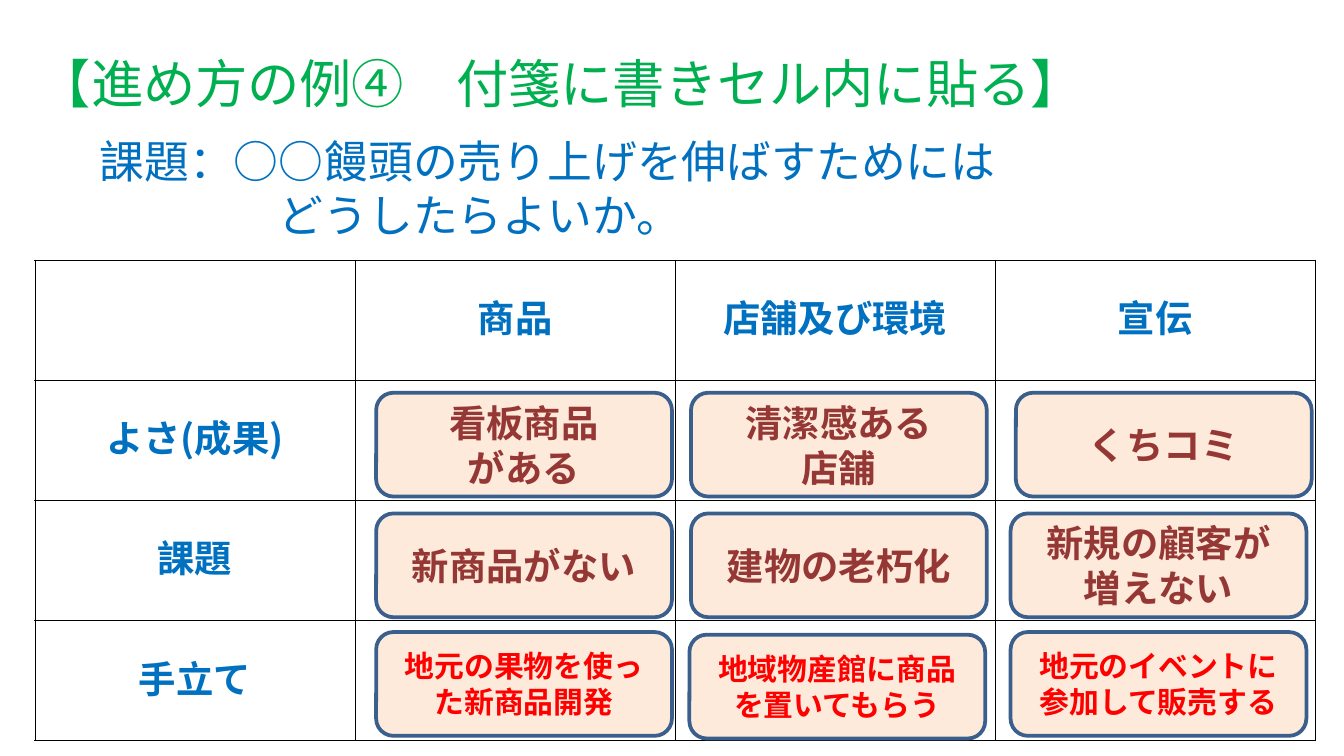
from typing import NamedTuple

from lxml import etree
from pptx import Presentation
from pptx import util as u
from pptx.dml.color import RGBColor
from pptx.enum import shapes, text
from pptx.oxml import ns

JAPANESE = "Noto Sans CJK JP"
BLUE, GREEN, BROWN, RED = "0070C0", "00B050", "953735", "FF0000"
NOTE_FILL, NOTE_LINE, BLACK = "FDEADA", "3A5F8C", "000000"


class Style(NamedTuple):
    size: int
    color: str
    bold: bool = False
    font: str = JAPANESE
    align: text.PP_ALIGN = text.PP_ALIGN.CENTER


class Note(NamedTuple):
    left: float
    top: float
    wording: str
    style: Style


TITLE = Style(28, GREEN, font="Arial", align=text.PP_ALIGN.LEFT)
QUESTION = Style(24, BLUE, align=text.PP_ALIGN.LEFT)
HEADING = Style(20, BLUE, bold=True)
FINDING = Style(20, BROWN, bold=True)
ACTION = Style(16, RED, bold=True)

TOPICS = ["商品", "店舗及び環境", "宣伝"]
VIEWPOINTS = ["よさ(成果)", "課題", "手立て"]
NOTES = [
    Note(7.11, 7.42, "看板商品\nがある", FINDING),
    Note(7.11, 9.7, "新商品がない", FINDING),
    Note(7.11, 11.94, "地元の果物を使った新商品開発", ACTION),
    Note(13.06, 7.42, "清潔感ある\n店舗", FINDING),
    Note(13.06, 9.7, "建物の老朽化", FINDING),
    Note(13.03, 11.99, "地域物産館に商品を置いてもらう", ACTION),
    Note(19.2, 7.42, "くちコミ", FINDING),
    Note(19.1, 9.7, "新規の顧客が増えない", FINDING),
    Note(19.1, 11.94, "地元のイベントに参加して販売する", ACTION),
]


def rgb(value: str) -> RGBColor:
    return RGBColor.from_string(value)


def write(frame, wording: str, style: Style) -> None:
    frame.text = wording
    frame.word_wrap = True
    frame.vertical_anchor = text.MSO_ANCHOR.MIDDLE
    for paragraph in frame.paragraphs:
        paragraph.alignment = style.align
        paragraph.line_spacing = u.Pt(style.size * 1.2)
        for run in paragraph.runs:
            font = run.font
            font.size, font.bold, font.name = u.Pt(style.size), style.bold, style.font
            font.color.rgb = rgb(style.color)
            east_asian = etree.SubElement(run._r.get_or_add_rPr(), ns.qn("a:ea"))
            east_asian.set("typeface", JAPANESE)


def outline_cell(cell) -> None:
    properties = cell._tc.get_or_add_tcPr()
    for position, side in enumerate(("lnL", "lnR", "lnT", "lnB")):
        border = etree.Element(ns.qn(f"a:{side}"), w=str(u.Pt(0.5)))
        fill = etree.SubElement(border, ns.qn("a:solidFill"))
        etree.SubElement(fill, ns.qn("a:srgbClr"), val=BLACK)
        properties.insert(position, border)


def add_matrix(slide) -> None:
    rows = [["", *TOPICS]] + [[viewpoint, "", "", ""] for viewpoint in VIEWPOINTS]
    matrix = slide.shapes.add_table(
        4, 4, u.Cm(0.66), u.Cm(4.91), u.Cm(24.2), u.Cm(9.08)
    ).table
    matrix.first_row = matrix.horz_banding = False
    for row, labels in enumerate(rows):
        for column, label in enumerate(labels):
            cell = matrix.cell(row, column)
            cell.fill.background()
            outline_cell(cell)
            cell.margin_left = cell.margin_right = cell.margin_top = u.Cm(0.03)
            cell.margin_bottom = 0
            if label:
                write(cell.text_frame, label, HEADING)
                cell.vertical_anchor = text.MSO_ANCHOR.MIDDLE


def add_note(slide, note: Note) -> None:
    sticky = slide.shapes.add_shape(
        shapes.MSO_SHAPE.ROUNDED_RECTANGLE,
        u.Cm(note.left), u.Cm(note.top), u.Cm(5.59), u.Cm(1.96),
    )
    sticky.shadow.inherit = False
    sticky.fill.solid()
    sticky.fill.fore_color.rgb = rgb(NOTE_FILL)
    sticky.line.color.rgb = rgb(NOTE_LINE)
    sticky.line.width = u.Pt(2)
    write(sticky.text_frame, note.wording, note.style)


def main() -> None:
    deck = Presentation()
    deck.slide_width, deck.slide_height = u.Cm(25.4), u.Cm(14.28)
    slide = deck.slides.add_slide(deck.slide_layouts[5])

    heading = slide.shapes.title
    heading.left, heading.top = u.Cm(0.48), u.Cm(0.89)
    heading.width, heading.height = u.Cm(24.23), u.Cm(1.35)
    write(heading.text_frame, "【進め方の例④　付箋に書きセル内に貼る】", TITLE)

    add_matrix(slide)

    question = slide.shapes.add_textbox(u.Cm(1.63), u.Cm(2.57), u.Cm(19.46), u.Cm(1.96))
    write(
        question.text_frame,
        "課題：○○饅頭の売り上げを伸ばすためには\nどうしたらよいか。",
        QUESTION,
    )
    second_line = question.text_frame.paragraphs[1]
    second_line._p.get_or_add_pPr().set("marL", str(u.Pt(4 * QUESTION.size)))

    for note in NOTES:
        add_note(slide, note)

    deck.save("out.pptx")


if __name__ == "__main__":
    main()
